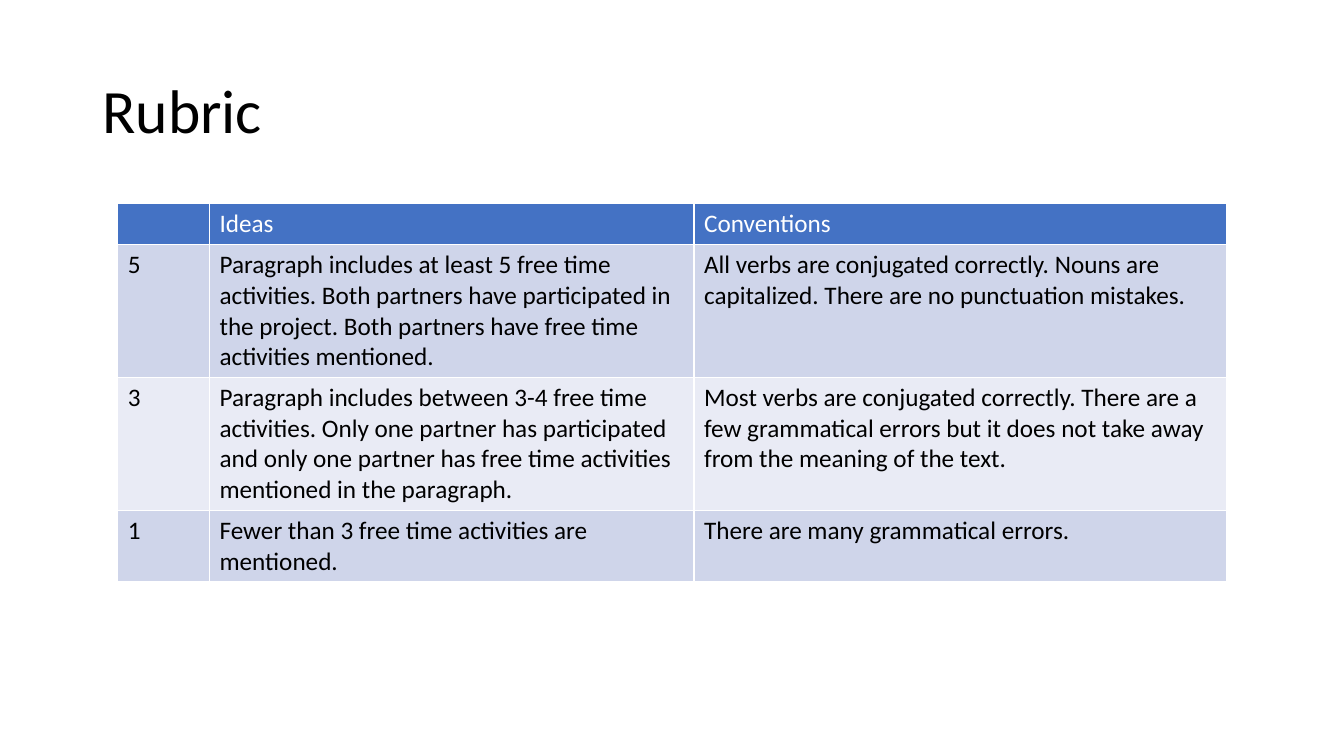
from lxml import etree
from pptx import Presentation
from pptx import util as u
from pptx.dml.color import RGBColor
from pptx.enum import text
from pptx.oxml.ns import qn

BLACK = RGBColor(0x00, 0x00, 0x00)
WHITE = RGBColor(0xFF, 0xFF, 0xFF)
HEADER = RGBColor(0x44, 0x72, 0xC4)
BANDS = [RGBColor(0xCF, 0xD5, 0xEA), RGBColor(0xE9, 0xEB, 0xF5)]
FONT = "Calibri"

COL_WIDTHS = [2.31, 12.21, 13.42]
ROW_HEIGHTS = [1.03, 3.35, 3.35, 1.8]
RUBRIC = [
    ["", "Ideas", "Conventions"],
    ["5",
     "Paragraph includes at least 5 free time activities. Both partners have "
     "participated in the project. Both partners have free time activities mentioned.",
     "All verbs are conjugated correctly. Nouns are capitalized. "
     "There are no punctuation mistakes."],
    ["3",
     "Paragraph includes between 3-4 free time activities. Only one partner has "
     "participated and only one partner has free time activities mentioned in the paragraph.",
     "Most verbs are conjugated correctly. There are a few grammatical errors "
     "but it does not take away from the meaning of the text."],
    ["1",
     "Fewer than 3 free time activities are mentioned.",
     "There are many grammatical errors."],
]


def style_font(font, size, color):
    font.name = FONT
    font.size = u.Pt(size)
    font.bold = False
    font.color.rgb = color


def set_borders(cell, color, width):
    tcPr = cell._tc.get_or_add_tcPr()
    for i, side in enumerate(("lnL", "lnR", "lnT", "lnB")):
        ln = etree.Element(qn(f"a:{side}"), w=str(u.Pt(width)))
        fill = etree.SubElement(ln, qn("a:solidFill"))
        etree.SubElement(fill, qn("a:srgbClr"), val=str(color))
        tcPr.insert(i, ln)


def add_title(s, title, left, top, width, height):
    sp = s.shapes.add_textbox(u.Cm(left), u.Cm(top), u.Cm(width), u.Cm(height))
    tf = sp.text_frame
    tf.word_wrap = True
    tf.vertical_anchor = text.MSO_ANCHOR.MIDDLE
    tf.text = title
    p = tf.paragraphs[0]
    p.line_spacing = 0.9
    style_font(p.runs[0].font, 44, BLACK)


def add_rubric(s, rows, left, top):
    table = s.shapes.add_table(
        len(rows), len(COL_WIDTHS), u.Cm(left), u.Cm(top),
        u.Cm(sum(COL_WIDTHS)), u.Cm(sum(ROW_HEIGHTS))).table
    for col, width in zip(table.columns, COL_WIDTHS):
        col.width = u.Cm(width)
    for i, (row, height) in enumerate(zip(table.rows, ROW_HEIGHTS)):
        row.height = u.Cm(height)
        for cell, words in zip(row.cells, rows[i]):
            cell.text = words
            cell.fill.solid()
            cell.fill.fore_color.rgb = BANDS[(i - 1) % 2] if i else HEADER
            set_borders(cell, WHITE, 1)
            for r in cell.text_frame.paragraphs[0].runs:
                style_font(r.font, 18, BLACK if i else WHITE)


def main():
    prs = Presentation()
    prs.slide_width = u.Cm(33.87)
    prs.slide_height = u.Cm(19.05)
    s = prs.slides.add_slide(prs.slide_layouts[6])
    add_title(s, "Rubric", 2.33, 1.01, 29.21, 3.68)
    add_rubric(s, RUBRIC, 2.97, 5.13)
    prs.save("out.pptx")


if __name__ == "__main__":
    main()
